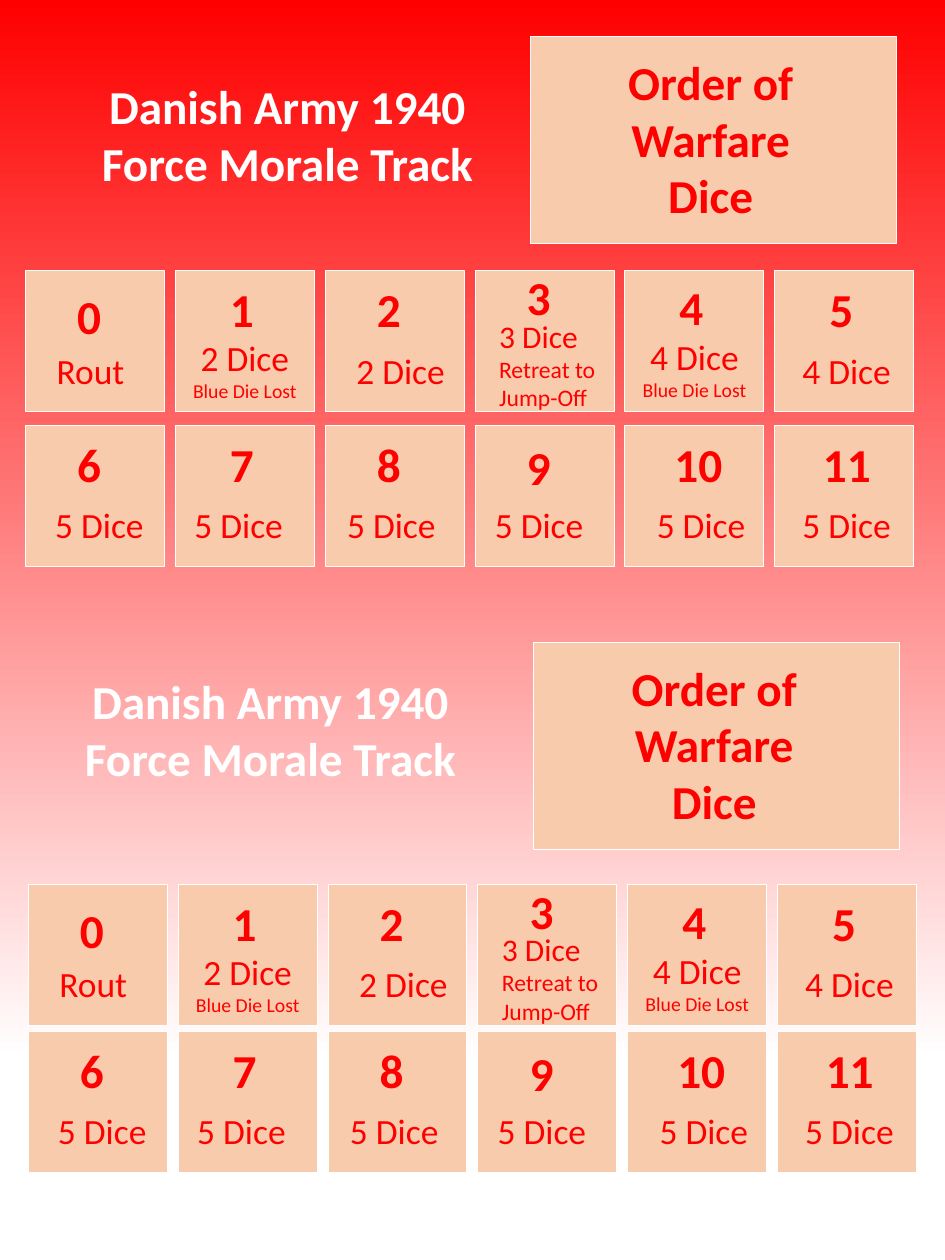
from dataclasses import dataclass

from pptx import Presentation
from pptx import util as u
from pptx.dml.color import RGBColor
from pptx.enum import shapes, text
from pptx.slide import Slide

RED = RGBColor(0xFF, 0x00, 0x00)
WHITE = RGBColor(0xFF, 0xFF, 0xFF)
PEACH = RGBColor(0xF8, 0xCB, 0xAD)
FONT = "Calibri"

COLUMN = ROW = u.Inches(0.01)
SLIDE_COLUMNS, SLIDE_ROWS = 1333, 1778
TILES_PER_ROW = 6
TILE_COLUMNS, TILE_ROWS = 196, 199
TILE_PITCH = 211.4
LABEL_DOWN = 105


@dataclass(frozen=True)
class Area:
    column: float
    row: float
    columns: float
    rows: float

    def within(self, column: float, row: float) -> "Area":
        return Area(self.column + column, self.row + row, self.columns, self.rows)

    def lengths(self) -> tuple[u.Emu, ...]:
        return (u.Emu(round(self.column * COLUMN)), u.Emu(round(self.row * ROW)),
                u.Emu(round(self.columns * COLUMN)), u.Emu(round(self.rows * ROW)))


@dataclass(frozen=True)
class Words:
    content: str
    size: int


@dataclass(frozen=True)
class MoraleLevel:
    number_area: Area
    label_area: Area
    label: tuple[Words, ...]
    centred: bool = False


@dataclass(frozen=True)
class MoraleTrack:
    title_area: Area
    dice_area: Area
    first_column: float
    tile_rows: tuple[float, float]


def number_area(column: float, row: float = 9, columns: float = 77) -> Area:
    return Area(column, row, columns, 91)


def plain_level(number: Area, label_column: float, label: str,
                label_columns: float = 166) -> MoraleLevel:
    return MoraleLevel(number, Area(label_column, LABEL_DOWN, label_columns, 71),
                       (Words(label, 36),))


def blue_die_level(number: Area, label_row: float, label: str) -> MoraleLevel:
    return MoraleLevel(number, Area(8, label_row, 180, 138),
                       (Words(label, 36), Words("Blue Die Lost", 20)), centred=True)


LEVELS = (
    plain_level(number_area(63, 19), 34, "Rout", 127),
    blue_die_level(number_area(67), 88, "2 Dice "),
    plain_level(number_area(63), 34, "2 Dice", 154),
    MoraleLevel(number_area(63, -8), Area(24, 60, 193, 145),
                (Words("3 Dice\n", 32), Words("Retreat to Jump-Off", 24))),
    blue_die_level(number_area(67, 6), 86, "4 Dice "),
    plain_level(number_area(67), 29, "4 Dice"),
    plain_level(number_area(63), 32, "5 Dice"),
    plain_level(number_area(67), 17, "5 Dice"),
    plain_level(number_area(63), 21, "5 Dice"),
    plain_level(number_area(63, 14), 18, "5 Dice"),
    plain_level(number_area(60, columns=90), 35, "5 Dice"),
    plain_level(number_area(58, columns=106), 29, "5 Dice"),
)

TRACKS = (
    MoraleTrack(Area(123, 104, 565, 172), Area(748, 51, 516, 293), 36, (382, 600)),
    MoraleTrack(Area(99, 944, 565, 172), Area(753, 906, 516, 293), 40, (1248, 1455)),
)


def draw_tile(slide: Slide, area: Area) -> None:
    tile = slide.shapes.add_shape(shapes.MSO_SHAPE.RECTANGLE, *area.lengths())
    tile.shadow.inherit = False
    tile.fill.solid()
    tile.fill.fore_color.rgb = PEACH
    tile.line.color.rgb = WHITE
    tile.line.width = u.Pt(1)


def write(slide: Slide, area: Area, wording: tuple[Words, ...], color: RGBColor = RED,
          bold: bool = False, centred: bool = False, wrap: bool = True) -> None:
    frame = slide.shapes.add_textbox(*area.lengths()).text_frame
    frame.word_wrap = wrap
    frame.auto_size = text.MSO_AUTO_SIZE.SHAPE_TO_FIT_TEXT
    paragraph = frame.paragraphs[0]
    paragraph.alignment = text.PP_ALIGN.CENTER if centred else text.PP_ALIGN.LEFT
    paragraph.font.name = FONT
    paragraph.font.bold = bold
    paragraph.font.color.rgb = color
    if len(wording) == 1:
        paragraph.font.size = u.Pt(wording[0].size)
    for words in wording:
        for index, line in enumerate(words.content.split("\n")):
            if index:
                paragraph.add_line_break()
            if line:
                run = paragraph.add_run()
                run.text = line
                if len(wording) > 1:
                    run.font.size = u.Pt(words.size)


def draw_level(slide: Slide, number: int, level: MoraleLevel, tile: Area) -> None:
    write(slide, level.number_area.within(tile.column, tile.row),
          (Words(str(number), 48),), bold=True)
    write(slide, level.label_area.within(tile.column, tile.row), level.label,
          centred=level.centred)


def draw_track(slide: Slide, track: MoraleTrack) -> None:
    write(slide, track.title_area, (Words("Danish Army 1940\nForce Morale Track", 48),),
          color=WHITE, bold=True, centred=True, wrap=False)
    draw_tile(slide, track.dice_area)
    write(slide, Area(45, 19, 419, 252).within(track.dice_area.column, track.dice_area.row),
          (Words("Order of\nWarfare\nDice", 48),), bold=True, centred=True)
    tiles = [Area(track.first_column + TILE_PITCH * place, row, TILE_COLUMNS, TILE_ROWS)
             for row in track.tile_rows for place in range(TILES_PER_ROW)]
    for tile in tiles:
        draw_tile(slide, tile)
    for number, (level, tile) in enumerate(zip(LEVELS, tiles)):
        draw_level(slide, number, level, tile)


def paint_background(slide: Slide) -> None:
    fill = slide.background.fill
    fill.gradient()
    fill.gradient_angle = 270
    for stop, position, color in zip(fill.gradient_stops, (0, 0.84), (RED, WHITE)):
        stop.position = position
        stop.color.rgb = color


def main() -> None:
    deck = Presentation()
    deck.slide_width = SLIDE_COLUMNS * COLUMN
    deck.slide_height = SLIDE_ROWS * ROW
    slide = deck.slides.add_slide(deck.slide_layouts[6])
    paint_background(slide)
    for track in TRACKS:
        draw_track(slide, track)
    deck.save("out.pptx")


if __name__ == "__main__":
    main()
